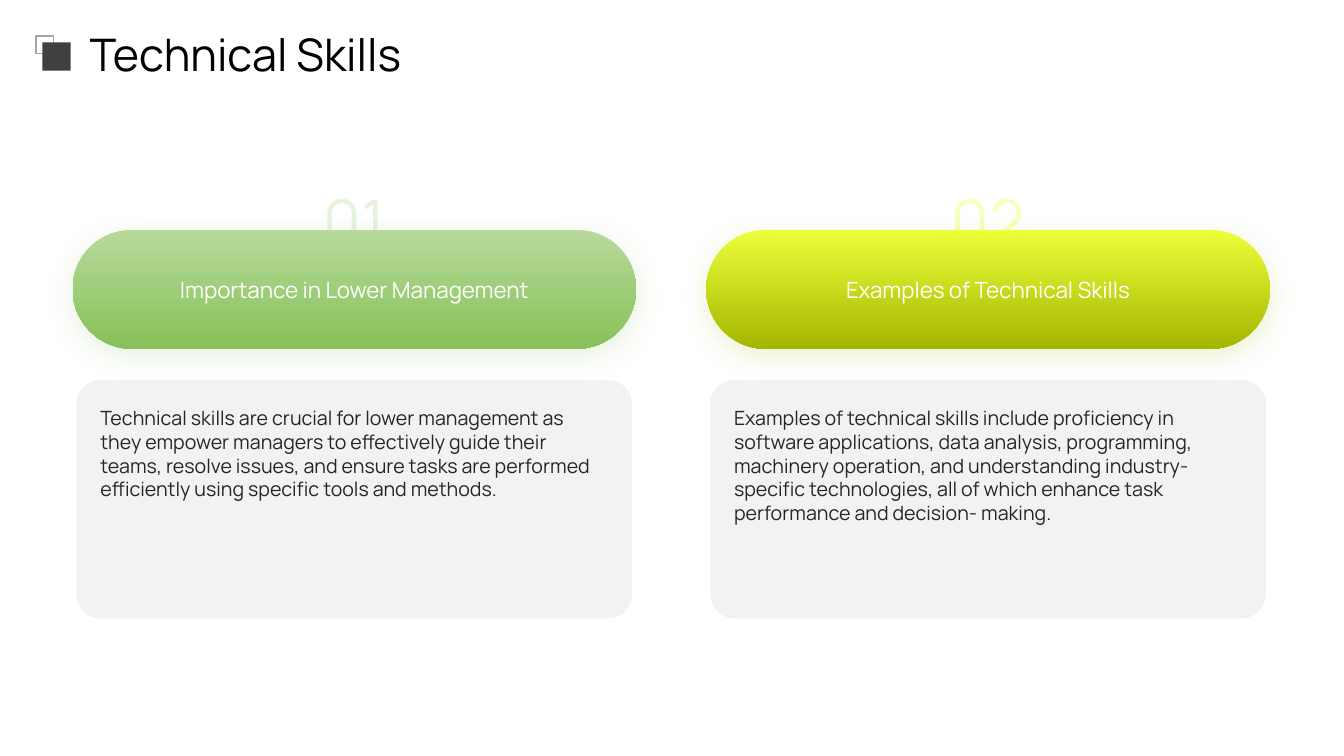
from dataclasses import dataclass

from lxml.etree import SubElement
from pptx import Presentation
from pptx.dml.color import RGBColor as Rgb
from pptx.enum.shapes import MSO_SHAPE as Form
from pptx.enum.text import MSO_ANCHOR as Anchor, MSO_AUTO_SIZE as Fit, PP_ALIGN as Align
from pptx.oxml.ns import qn
from pptx.shapes.autoshape import Shape
from pptx.slide import Slide
from pptx.util import Cm, Pt


@dataclass(frozen=True)
class Theme:
    font: str = "Manrope"
    title: str = "000000"
    body: str = "262626"
    white: str = "FFFFFF"
    card: str = "F2F2F2"
    dark: str = "404040"
    edge: str = "A6A6A6"
    title_size: int = 32
    count_size: int = 44
    head_size: int = 16
    body_size: int = 14


@dataclass(frozen=True)
class Box:
    left: float
    top: float
    width: float
    height: float

    def spot(self) -> tuple[Cm, Cm, Cm, Cm]:
        return Cm(self.left), Cm(self.top), Cm(self.width), Cm(self.height)


@dataclass(frozen=True)
class Topic:
    count: str
    head: str
    body: str
    tint: str
    light: str
    deep: str


THEME = Theme()
MID = 8.93
PITCH = 15.97
TOPICS = [
    Topic(
        "01",
        "Importance in Lower Management",
        "Technical skills are crucial for lower management as they empower managers "
        "to effectively guide their teams, resolve issues, and ensure tasks are "
        "performed efficiently using specific tools and methods.",
        "E7F3DE", "B7DA9B", "87C159",
    ),
    Topic(
        "02",
        "Examples of Technical Skills",
        "Examples of technical skills include proficiency in software applications, "
        "data analysis, programming, machinery operation, and understanding industry- "
        "specific technologies, all of which enhance task performance and decision- making.",
        "F9FFBD", "ECFF3A", "A4B600",
    ),
]


def write(shape: Shape, text: str, size: int, color: str,
          align: Align = Align.LEFT, anchor: Anchor = Anchor.TOP, fit: Fit = Fit.NONE) -> None:
    frame = shape.text_frame
    frame.text = text
    frame.word_wrap = True
    frame.auto_size = fit
    frame.vertical_anchor = anchor
    frame.margin_left = frame.margin_right = frame.margin_top = frame.margin_bottom = 0
    line = frame.paragraphs[0]
    line.alignment = align
    font = line.runs[0].font
    font.name = THEME.font
    font.size = Pt(size)
    font.color.rgb = Rgb.from_string(color)


def label(slide: Slide, box: Box, text: str, size: int, color: str,
          align: Align = Align.LEFT, anchor: Anchor = Anchor.TOP, fit: Fit = Fit.NONE) -> None:
    write(slide.shapes.add_textbox(*box.spot()), text, size, color, align, anchor, fit)


def block(slide: Slide, form: Form, box: Box, fill: str = "", edge: str = "",
          curve: float = 0) -> Shape:
    shape = slide.shapes.add_shape(form, *box.spot())
    shape.shadow.inherit = False
    if curve:
        shape.adjustments[0] = curve
    if fill:
        shape.fill.solid()
        shape.fill.fore_color.rgb = Rgb.from_string(fill)
    else:
        shape.fill.background()
    if edge:
        shape.line.color.rgb = Rgb.from_string(edge)
        shape.line.width = Pt(1)
    else:
        shape.line.fill.background()
    return shape


def pill(slide: Slide, box: Box, light: str, deep: str) -> None:
    shape = block(slide, Form.ROUNDED_RECTANGLE, box, curve=0.5)
    shape.fill.gradient()
    shape.fill.gradient_angle = 270
    for stop, color in zip(shape.fill.gradient_stops, (light, deep)):
        stop.color.rgb = Rgb.from_string(color)
    effect = shape.element.spPr.find(qn("a:effectLst"))
    glow = SubElement(effect, qn("a:outerShdw"), blurRad=str(Pt(20)), dist=str(Pt(5)),
                      dir="5400000", algn="t", rotWithShape="0")
    tone = SubElement(glow, qn("a:srgbClr"), val=deep)
    SubElement(tone, qn("a:alpha"), val="20000")


def column(slide: Slide, topic: Topic, mid: float) -> None:
    def area(top: float, width: float, height: float) -> Box:
        return Box(mid - width / 2, top, width, height)

    label(slide, area(4.6, 6, 1.55), topic.count, THEME.count_size, topic.tint,
          Align.CENTER, fit=Fit.SHAPE_TO_FIT_TEXT)
    block(slide, Form.ROUNDED_RECTANGLE, area(9.58, 14, 6), THEME.card, curve=0.1)
    pill(slide, area(5.79, 14.2, 3), topic.light, topic.deep)
    label(slide, area(10.24, 12.8, 4.42), topic.body, THEME.body_size, THEME.body)
    label(slide, area(6.2, 12, 2.2), topic.head, THEME.head_size, THEME.white,
          Align.CENTER, Anchor.MIDDLE)


def heading(slide: Slide, text: str) -> None:
    title = slide.shapes.title
    title.left, title.top, title.width, title.height = Box(2.26, 0.74, 30.23, 1.2).spot()
    write(title, text, THEME.title_size, THEME.title, anchor=Anchor.MIDDLE)
    block(slide, Form.RECTANGLE, Box(0.91, 0.91, 0.44, 0.44), edge=THEME.edge)
    block(slide, Form.RECTANGLE, Box(1.07, 1.07, 0.71, 0.71), THEME.dark)


def main() -> None:
    deck = Presentation()
    deck.slide_width, deck.slide_height = Cm(33.87), Cm(19.05)
    slide = deck.slides.add_slide(deck.slide_layouts[5])
    heading(slide, "Technical Skills")
    for index, topic in enumerate(TOPICS):
        column(slide, topic, MID + index * PITCH)
    deck.save("out.pptx")


if __name__ == "__main__":
    main()
